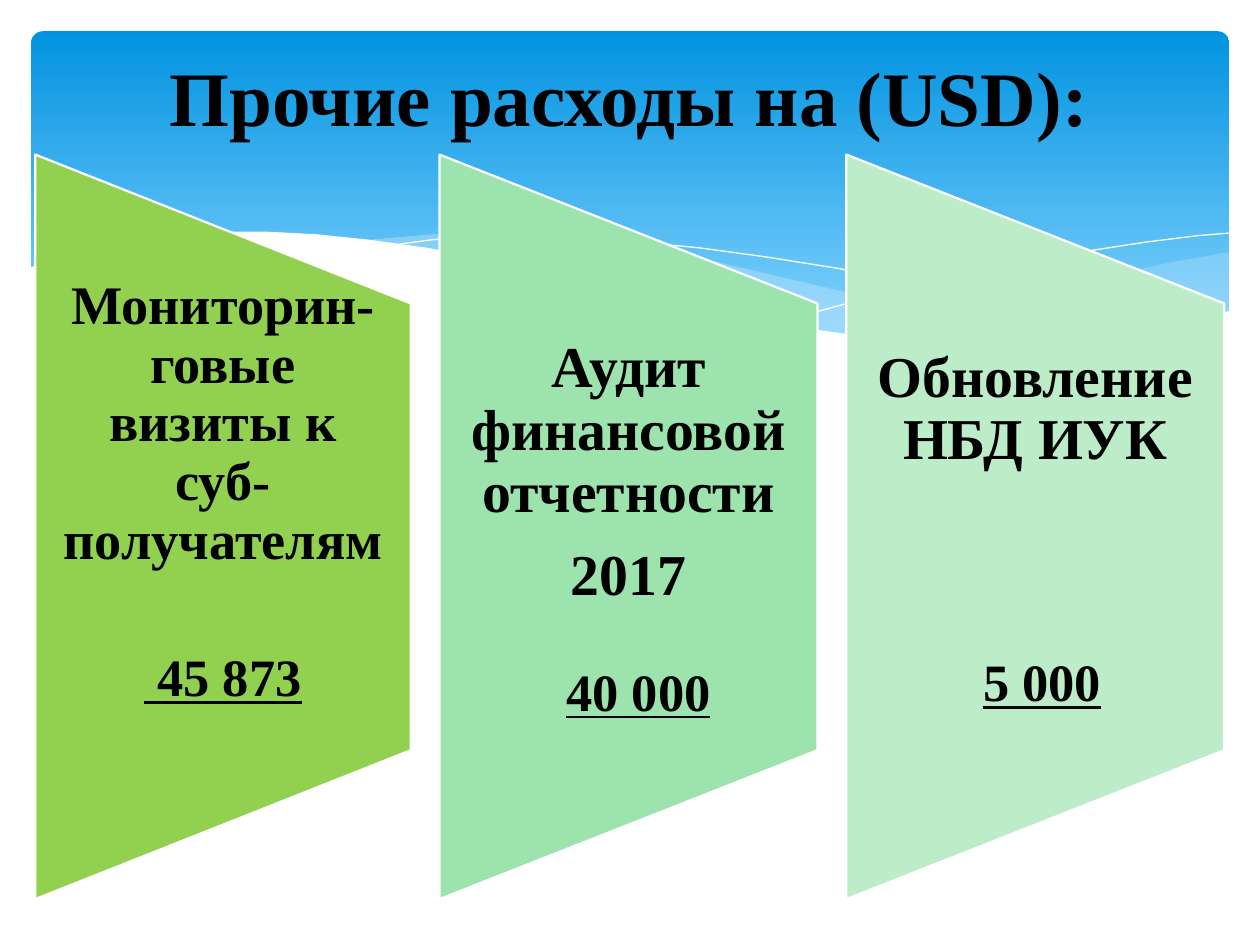
"""Build a slide of three slanted panels that list other expenses in USD."""
from dataclasses import dataclass

from lxml import etree
from pptx import Presentation
from pptx.dml.color import RGBColor
from pptx.enum.shapes import MSO_SHAPE
from pptx.enum.text import MSO_ANCHOR, PP_ALIGN
from pptx.oxml.ns import qn
from pptx.util import Cm, Pt

ROUNDED = MSO_SHAPE.ROUNDED_RECTANGLE
TRAPEZOID = MSO_SHAPE.FLOWCHART_MANUAL_OPERATION
TOP, MIDDLE = MSO_ANCHOR.TOP, MSO_ANCHOR.MIDDLE
CENTER = PP_ALIGN.CENTER

BLACK = RGBColor(0x00, 0x00, 0x00)
WHITE = RGBColor(0xFF, 0xFF, 0xFF)
DEEP_BLUE = RGBColor(0x02, 0x93, 0xE0)
LIGHT_BLUE = RGBColor(0x83, 0xD3, 0xFE)
WAVE_BLUE = RGBColor(0xC6, 0xE7, 0xFC)
GREEN = RGBColor(0x92, 0xD0, 0x50)
MINT = RGBColor(0x9D, 0xE3, 0xAE)
PALE_MINT = RGBColor(0xBD, 0xEC, 0xC9)

FONT = "Times New Roman"
PANEL_LENGTH = 15.01
PANEL_MIDDLE = 10.62
FIRST_RIGHT, PANEL_PITCH = 8.28, 8.2
BOX_TOP, BOX_BOTTOM = 6.12, 15.11
SIDE_INSET = 0.55

RIGHT_WAVE = [
    (24.79, 5.08), (23.75, 5.26), (21.87, 5.66), (19.79, 6.15), (17.93, 6.53),
    (16.79, 6.73), (17.91, 6.88), (19.23, 7.01), (20.68, 7.06), (21.92, 6.99),
    (22.99, 6.83), (23.93, 6.58), (24.79, 6.27)]
MIDDLE_WAVE = [
    (22.68, 6.93), (21.26, 6.73), (19.69, 6.45), (17.93, 6.1), (15.98, 5.64),
    (14.45, 5.28), (13.06, 5.03), (11.81, 4.85), (10.67, 4.75), (9.65, 4.7),
    (8.74, 4.72), (7.26, 4.85), (8.69, 5.05), (10.26, 5.36), (11.4, 5.64),
    (13.46, 6.1), (15.27, 6.48), (16.89, 6.76), (18.34, 6.96), (19.94, 7.06),
    (21.29, 7.06)]
FALLING_LINE = [
    (7.85, 4.95), (8.74, 4.83), (9.83, 4.75), (11, 4.75), (12.42, 4.83),
    (14.12, 5), (15.44, 5.18), (16.89, 5.41), (18.47, 5.74), (20.19, 6.12),
    (22.07, 6.63), (23.04, 6.91)]
RISING_LINE = [
    (15.57, 6.53), (17.07, 6.12), (19, 5.66), (20.47, 5.33), (22, 5.05),
    (23.11, 4.88), (24.16, 4.75), (24.77, 4.7)]
WHITE_WAVE = [
    (24.82, 6.25), (24.13, 6.5), (23.37, 6.73), (22.53, 6.88), (21.59, 6.99),
    (20.55, 7.04), (19.33, 6.99), (17.98, 6.86), (16.46, 6.65), (14.71, 6.35),
    (12.78, 5.92), (11.35, 5.59), (9.93, 5.26), (8.64, 5), (7.42, 4.83),
    (6.35, 4.72), (5.36, 4.67), (4.5, 4.67), (3.71, 4.7), (3.02, 4.75),
    (2.41, 4.85), (1.7, 5), (1.17, 5.16), (0.58, 5.41), (0.58, 8.36),
    (24.82, 8.36)]


@dataclass
class Panel:
    """One panel: its look and its lines of text with their formats."""
    color: RGBColor
    width: float
    text_top: float
    lines: list


PANELS = [
    Panel(GREEN, 7.57, 5.6, [
        ("Мониторин-говые визиты к суб-получателям", dict(size=31)),
        (" 45 873", dict(size=30, before=46, underline=True))]),
    Panel(MINT, 7.62, 6.81, [
        ("Аудит финансовой отчетности", dict(size=33)),
        ("2017", dict(size=33, before=12)),
        ("40 000", dict(size=30, before=33, underline=True, indent=0.4))]),
    Panel(PALE_MINT, 7.62, 7.01, [
        ("Обновление НБД ИУК", dict(size=33)),
        ("5 000", dict(size=30, before=105, underline=True, indent=0.28))]),
]


def add_header(page):
    """Add the rounded blue gradient band."""
    band = page.shapes.add_shape(ROUNDED, Cm(0.63), Cm(0.63), Cm(24.15), Cm(6.86))
    band.adjustments[0] = 0.034
    band.shadow.inherit = False
    band.line.fill.background()
    band.fill.gradient()
    band.fill.gradient_angle = 270
    stops = [(0, DEEP_BLUE), (0.9, LIGHT_BLUE)]
    for stop, (position, color) in zip(band.fill.gradient_stops, stops):
        stop.position = position
        stop.color.rgb = color


def add_curve(page, points, fill=None, opacity=100):
    """Add a filled wave, or a thin white line when there is no fill."""
    (start, *rest) = [(Cm(x), Cm(y)) for x, y in points]
    builder = page.shapes.build_freeform(*start)
    builder.add_line_segments(rest, close=fill is not None)
    curve = builder.convert_to_shape()
    curve.shadow.inherit = False
    if fill is None:
        curve.fill.background()
        curve.line.color.rgb = WHITE
        curve.line.width = Pt(0)
        return
    curve.line.fill.background()
    curve.fill.solid()
    curve.fill.fore_color.rgb = fill
    if opacity < 100:
        color = curve.fill._xPr.find(".//" + qn("a:srgbClr"))
        etree.SubElement(color, qn("a:alpha")).set("val", str(opacity * 1000))


def add_box(page, left, top, width, height, anchor):
    """Add a wrapping text box and return its text frame."""
    box = page.shapes.add_textbox(Cm(left), Cm(top), Cm(width), Cm(height))
    frame = box.text_frame
    frame.word_wrap = True
    frame.vertical_anchor = anchor
    return frame


def write(para, text, size, before=0, underline=False, indent=0, spacing=0.9):
    """Write centred bold text in a paragraph."""
    para.alignment = CENTER
    para.line_spacing = spacing
    para.space_before = Pt(before)
    if indent:
        para._p.get_or_add_pPr().set("marL", str(Cm(indent)))
    span = para.add_run()
    span.text = text
    span.font.name = FONT
    span.font.size = Pt(size)
    span.font.bold = True
    span.font.underline = underline
    span.font.color.rgb = BLACK


def add_panel(page, panel, right):
    """Add a turned trapezoid and the text over it."""
    left = right - panel.width
    shape = page.shapes.add_shape(
        TRAPEZOID,
        Cm(left + (panel.width - PANEL_LENGTH) / 2),
        Cm(PANEL_MIDDLE - panel.width / 2),
        Cm(PANEL_LENGTH), Cm(panel.width))
    shape.rotation = 270
    shape.shadow.inherit = False
    shape.fill.solid()
    shape.fill.fore_color.rgb = panel.color
    shape.line.color.rgb = WHITE
    shape.line.width = Pt(1.25)

    top = min(panel.text_top, BOX_TOP)
    frame = add_box(page, left, top, panel.width, BOX_BOTTOM - top, TOP)
    frame.margin_left = frame.margin_right = Cm(SIDE_INSET)
    frame.margin_top = Cm(panel.text_top - top)
    frame.margin_bottom = 0
    for index, (text, style) in enumerate(panel.lines):
        para = frame.add_paragraph() if index else frame.paragraphs[0]
        write(para, text, **style)


def main():
    """Build and save the slide."""
    deck = Presentation()
    deck.slide_width, deck.slide_height = Cm(25.4), Cm(19.05)
    page = deck.slides.add_slide(deck.slide_layouts[6])
    add_header(page)
    add_curve(page, RIGHT_WAVE, WAVE_BLUE, 29)
    add_curve(page, MIDDLE_WAVE, WAVE_BLUE, 40)
    add_curve(page, FALLING_LINE)
    add_curve(page, RISING_LINE)
    add_curve(page, WHITE_WAVE, WHITE)
    title = add_box(page, 1.09, 1.12, 23.19, 1.6, MIDDLE)
    write(title.paragraphs[0], "Прочие расходы на (USD):", size=44, spacing=1.0)
    for index, panel in enumerate(PANELS):
        add_panel(page, panel, FIRST_RIGHT + index * PANEL_PITCH)
    deck.save("out.pptx")


if __name__ == "__main__":
    main()
